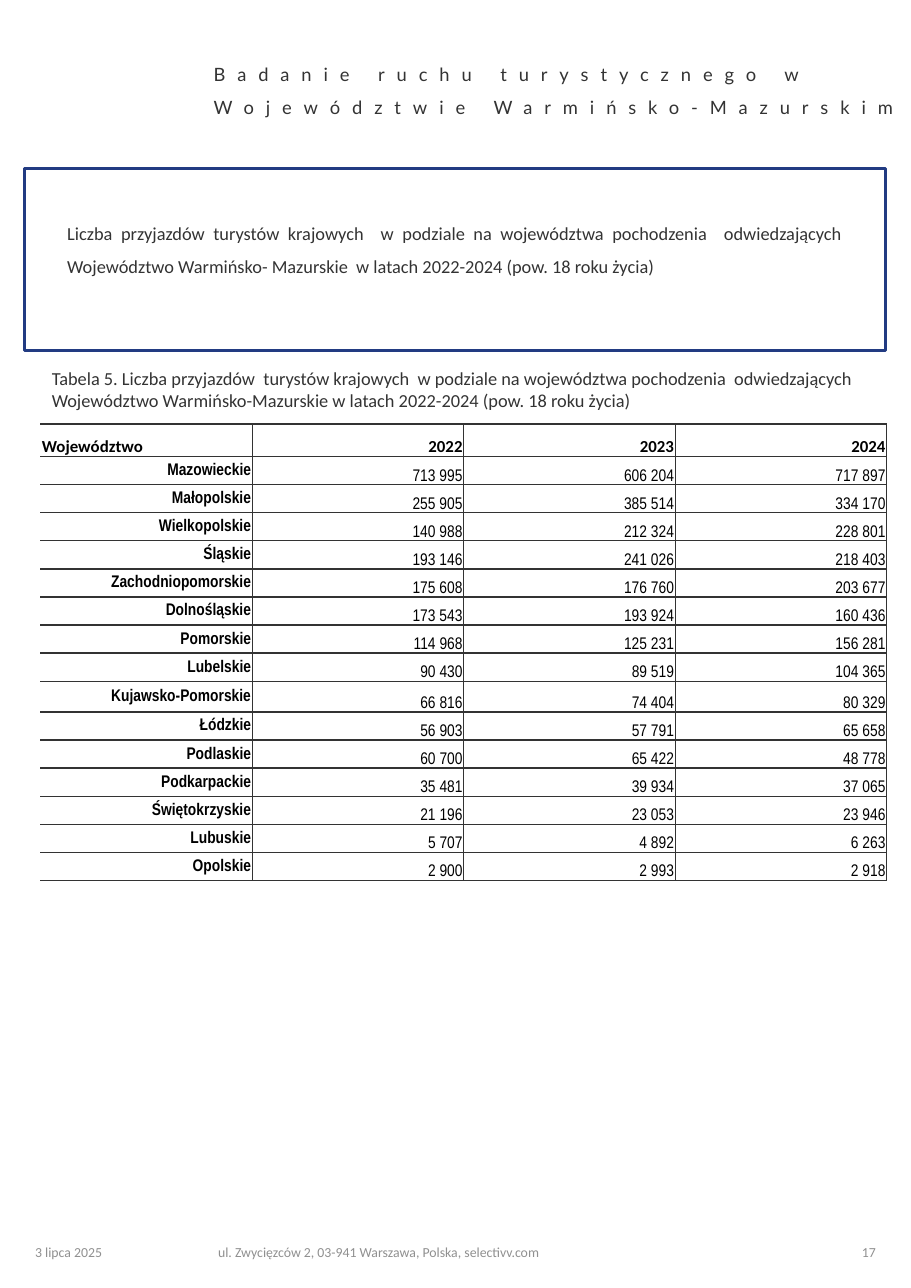
from dataclasses import dataclass

from lxml.etree import SubElement
from pptx import Presentation
from pptx.dml.color import RGBColor
from pptx.enum.shapes import MSO_SHAPE
from pptx.enum.text import MSO_ANCHOR, PP_ALIGN
from pptx.oxml.ns import qn
from pptx.slide import Slide
from pptx.table import Table, _Cell
from pptx.text.text import TextFrame, _Paragraph
from pptx.util import Emu, Pt

EMU_PER_PX = 4572  # 200 px to the inch


@dataclass(frozen=True)
class Theme:
    ink: str = "333333"
    black: str = "000000"
    white: str = "FFFFFF"
    footer: str = "909090"
    frame: str = "223B82"
    text_size: int = 12
    table_size: int = 11
    footer_size: int = 9
    letter_spacing: float = 7.8
    body_font: str = "Calibri"
    title_font: str = "Lato"
    narrow_font: str = "Arial Narrow"


THEME = Theme()


@dataclass(frozen=True)
class Box:
    left: int
    top: int
    width: int
    height: int

    def emu(self) -> tuple[Emu, Emu, Emu, Emu]:
        return px(self.left), px(self.top), px(self.width), px(self.height)


@dataclass(frozen=True)
class Style:
    size: int = THEME.text_size
    color: str = THEME.ink
    font: str = THEME.body_font
    bold: bool = False
    align: PP_ALIGN = PP_ALIGN.LEFT
    line_spacing: float = 1.0
    letter_spacing: float = 0


@dataclass(frozen=True)
class Label:
    text: str
    box: Box
    style: Style
    anchor: MSO_ANCHOR
    margins: tuple[int, int, int, int] = (20, 10, 20, 10)


@dataclass(frozen=True)
class Region:
    name: str
    arrivals: tuple[str, str, str]
    height: int = 51


TITLE = Label(
    "Badanie ruchu turystycznego w Województwie Warmińsko-Mazurskim",
    Box(388, 80, 1254, 134),
    Style(font=THEME.title_font, line_spacing=1.5, letter_spacing=THEME.letter_spacing),
    MSO_ANCHOR.BOTTOM,
    (0, 0, 0, 0),
)
INTRO = Label(
    "Liczba przyjazdów turystów krajowych  w podziale na województwa pochodzenia  "
    "odwiedzających Województwo Warmińsko- Mazurskie  w latach 2022-2024 (pow. 18 roku życia)",
    Box(44, 306, 1564, 330),
    Style(align=PP_ALIGN.JUSTIFY, line_spacing=1.5),
    MSO_ANCHOR.TOP,
    (78, 78, 78, 40),
)
FOOTERS = [
    Label(text, Box(left, 2230, width, 85),
          Style(THEME.footer_size, THEME.footer, align=align), MSO_ANCHOR.MIDDLE)
    for text, left, width, align in (
        ("3 lipca 2025", 44, 218, PP_ALIGN.LEFT),
        ("ul. Zwycięzców 2, 03-941 Warszawa, Polska, selectivv.com", 308, 758, PP_ALIGN.CENTER),
        ("17", 1496, 114, PP_ALIGN.RIGHT),
    )
]

CAPTION = (
    "Tabela 5. Liczba przyjazdów  turystów krajowych  w podziale na województwa pochodzenia  "
    "odwiedzających Województwo Warmińsko-Mazurskie w latach 2022-2024 (pow. 18 roku życia)"
)
HEADINGS = ("Województwo", "2022", "2023", "2024")
REGIONS = [
    Region("Mazowieckie", ("713 995", "606 204", "717 897")),
    Region("Małopolskie", ("255 905", "385 514", "334 170")),
    Region("Wielkopolskie", ("140 988", "212 324", "228 801")),
    Region("Śląskie", ("193 146", "241 026", "218 403")),
    Region("Zachodniopomorskie", ("175 608", "176 760", "203 677")),
    Region("Dolnośląskie", ("173 543", "193 924", "160 436")),
    Region("Pomorskie", ("114 968", "125 231", "156 281")),
    Region("Lubelskie", ("90 430", "89 519", "104 365")),
    Region("Kujawsko-Pomorskie", ("66 816", "74 404", "80 329"), height=56),
    Region("Łódzkie", ("56 903", "57 791", "65 658")),
    Region("Podlaskie", ("60 700", "65 422", "48 778")),
    Region("Podkarpackie", ("35 481", "39 934", "37 065")),
    Region("Świętokrzyskie", ("21 196", "23 053", "23 946")),
    Region("Lubuskie", ("5 707", "4 892", "6 263")),
    Region("Opolskie", ("2 900", "2 993", "2 918")),
]
ROW_HEIGHTS = [124, 59] + [region.height for region in REGIONS]
TABLE_BOX = Box(74, 646, 1536, sum(ROW_HEIGHTS))
CELL_MARGINS = (2, 2, 2, 0)


def px(value: int) -> Emu:
    return Emu(value * EMU_PER_PX)


def write(paragraph: _Paragraph, text: str, style: Style) -> None:
    paragraph.alignment = style.align
    paragraph.line_spacing = style.line_spacing
    run = paragraph.add_run()
    run.text = text
    run.font.size = Pt(style.size)
    run.font.name = style.font
    run.font.bold = style.bold
    run.font.color.rgb = RGBColor.from_string(style.color)
    if style.letter_spacing:
        run._r.get_or_add_rPr().set("spc", str(round(style.letter_spacing * 100)))


def set_margins(target: TextFrame | _Cell, margins: tuple[int, int, int, int]) -> None:
    """Apply left, top, right and bottom margins."""
    (target.margin_left, target.margin_top,
     target.margin_right, target.margin_bottom) = map(px, margins)


def fill_frame(frame: TextFrame, label: Label) -> None:
    frame.word_wrap = True
    frame.vertical_anchor = label.anchor
    set_margins(frame, label.margins)
    write(frame.paragraphs[0], label.text, label.style)


def add_label(slide: Slide, label: Label) -> None:
    fill_frame(slide.shapes.add_textbox(*label.box.emu()).text_frame, label)


def add_framed_label(slide: Slide, label: Label) -> None:
    shape = slide.shapes.add_shape(MSO_SHAPE.RECTANGLE, *label.box.emu())
    shape.shadow.inherit = False
    shape.fill.background()
    shape.line.color.rgb = RGBColor.from_string(THEME.frame)
    shape.line.width = Pt(2)
    fill_frame(shape.text_frame, label)


def set_borders(cell: _Cell, white_sides: str) -> None:
    """Draw all four borders; sides named in white_sides (L, R, T, B) are white."""
    cell.fill.background()
    properties = cell._tc.get_or_add_tcPr()
    for position, side in enumerate("LRTB"):
        color = THEME.white if side in white_sides else THEME.ink
        line = SubElement(properties, qn(f"a:ln{side}"), w=str(Pt(1)))
        SubElement(SubElement(line, qn("a:solidFill")), qn("a:srgbClr"), val=color)
        properties.insert(position, line)


def fill_cell(cell: _Cell, text: str, style: Style, anchor: MSO_ANCHOR) -> None:
    cell.vertical_anchor = anchor
    set_margins(cell, CELL_MARGINS)
    write(cell.text_frame.paragraphs[0], text, style)


def fill_caption(table: Table) -> None:
    for column in range(len(HEADINGS)):
        set_borders(table.cell(0, column), "LTR")
    caption = table.cell(0, 0)
    caption.merge(table.cell(0, len(HEADINGS) - 1))
    caption.vertical_anchor = MSO_ANCHOR.MIDDLE
    write(caption.text_frame.paragraphs[0], CAPTION, Style())


def add_arrivals_table(slide: Slide) -> None:
    table = slide.shapes.add_table(
        len(ROW_HEIGHTS), len(HEADINGS), *TABLE_BOX.emu()).table
    table.first_row = table.horz_banding = False
    for column in table.columns:
        column.width = px(TABLE_BOX.width // len(HEADINGS))
    for row, height in zip(table.rows, ROW_HEIGHTS):
        row.height = px(height)
    fill_caption(table)
    lines = [HEADINGS] + [(region.name, *region.arrivals) for region in REGIONS]
    for row, line in enumerate(lines, start=1):
        for column, text in enumerate(line):
            is_heading, is_name = row == 1, column == 0
            style = Style(
                THEME.table_size, THEME.black,
                THEME.body_font if is_heading else THEME.narrow_font,
                bold=is_heading or is_name,
                align=PP_ALIGN.LEFT if is_heading and is_name else PP_ALIGN.RIGHT)
            anchor = MSO_ANCHOR.MIDDLE if is_name and not is_heading else MSO_ANCHOR.BOTTOM
            cell = table.cell(row, column)
            set_borders(cell, "L" if is_name else "")
            fill_cell(cell, text, style, anchor)


def main() -> None:
    presentation = Presentation()
    presentation.slide_width, presentation.slide_height = px(1654), px(2338)
    slide = presentation.slides.add_slide(presentation.slide_layouts[6])
    for footer in FOOTERS:
        add_label(slide, footer)
    add_arrivals_table(slide)
    add_framed_label(slide, INTRO)
    add_label(slide, TITLE)
    presentation.save("out.pptx")


if __name__ == "__main__":
    main()
